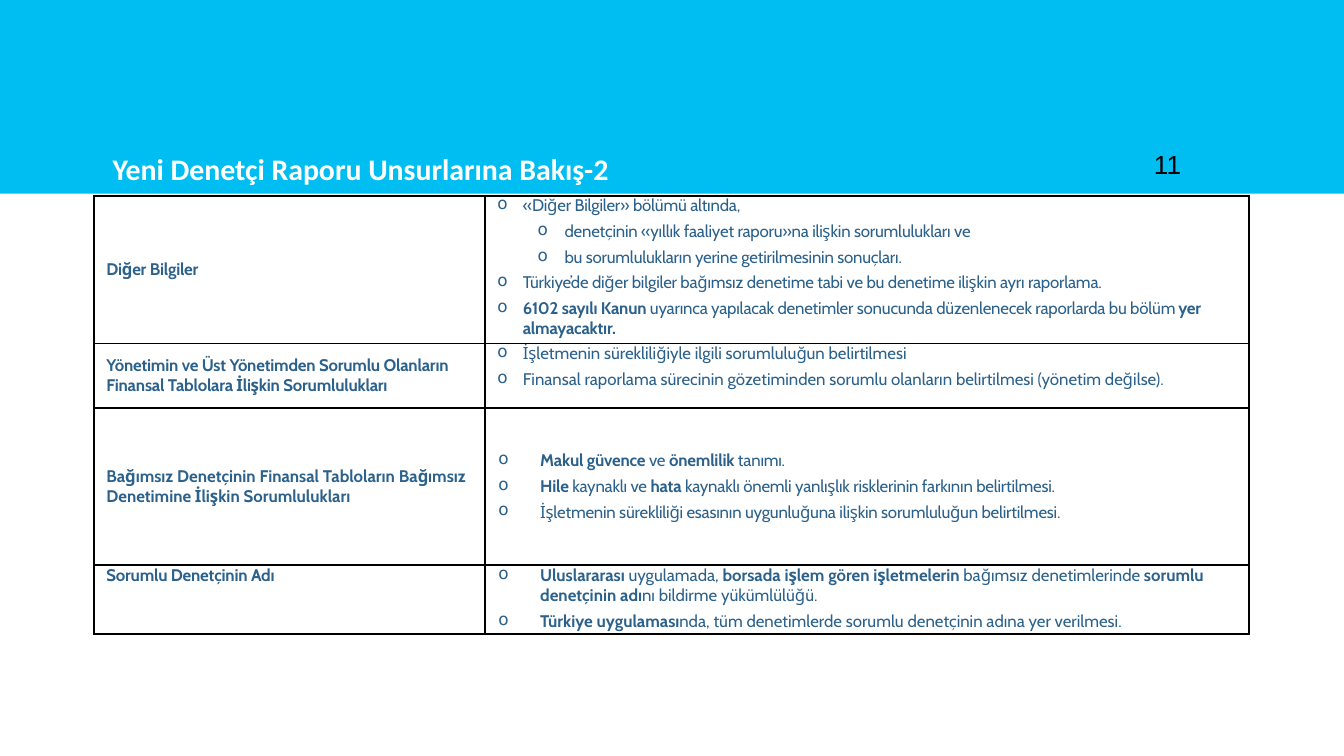
from dataclasses import dataclass

from pptx import Presentation
from pptx import util as u
from pptx.dml.color import RGBColor
from pptx.enum import shapes, text
from pptx.oxml import parse_xml
from pptx.oxml.ns import nsdecls, qn


@dataclass(frozen=True)
class Theme:
    band: RGBColor = RGBColor(0x00, 0xBE, 0xF2)
    white: RGBColor = RGBColor(0xFF, 0xFF, 0xFF)
    black: RGBColor = RGBColor(0x00, 0x00, 0x00)
    body: RGBColor = RGBColor(0x2B, 0x61, 0x8B)
    title_size: u.Pt = u.Pt(16)
    number_size: u.Pt = u.Pt(14)
    body_size: u.Pt = u.Pt(9)
    paragraph_gap: u.Pt = u.Pt(2.8)
    border: u.Pt = u.Pt(1)


THEME = Theme()

# Paragraph levels: left margin and first-line indent
LABEL = (u.Cm(0.23), u.Cm(0))
POINT = (u.Cm(0.71), u.Cm(-0.48))
SUBPOINT = (u.Cm(1.5), u.Cm(-0.51))
WIDE_POINT = (u.Cm(1.04), u.Cm(-0.79))

TOP, MIDDLE = text.MSO_ANCHOR.TOP, text.MSO_ANCHOR.MIDDLE
TIGHT, NORMAL = -10, 0  # letter spacing in hundredths of a point

COLUMN_WIDTHS = [u.Cm(7.39), u.Cm(14.43)]
ROW_HEIGHTS = [u.Cm(2.79), u.Cm(1.22), u.Cm(2.97), u.Cm(1.3)]

# Each cell: anchor, letter spacing, paragraphs; ** switches bold on and off
ROWS = [
    [
        (MIDDLE, TIGHT, [(LABEL, "**Diğer Bilgiler**")]),
        (TOP, TIGHT, [
            (POINT, "«Diğer Bilgiler» bölümü altında,"),
            (SUBPOINT, "denetçinin «yıllık faaliyet raporu»na ilişkin sorumlulukları ve"),
            (SUBPOINT, "bu sorumlulukların yerine getirilmesinin sonuçları."),
            (POINT, "Türkiye’de diğer bilgiler bağımsız denetime tabi ve bu denetime "
                    "ilişkin ayrı raporlama."),
            (POINT, "**6102 sayılı Kanun **uyarınca yapılacak denetimler sonucunda "
                    "düzenlenecek raporlarda bu bölüm **yer almayacaktır.**"),
        ]),
    ],
    [
        (MIDDLE, TIGHT, [(LABEL, "**Yönetimin ve Üst Yönetimden Sorumlu Olanların "
                                 "Finansal Tablolara İlişkin Sorumlulukları**")]),
        (TOP, NORMAL, [
            (POINT, "İşletmenin sürekliliğiyle ilgili sorumluluğun belirtilmesi"),
            (POINT, "Finansal raporlama sürecinin gözetiminden sorumlu olanların "
                    "belirtilmesi (yönetim değilse)."),
        ]),
    ],
    [
        (MIDDLE, NORMAL, [(LABEL, "**Bağımsız Denetçinin Finansal Tabloların Bağımsız "
                                  "Denetimine İlişkin Sorumlulukları**")]),
        (MIDDLE, TIGHT, [
            (WIDE_POINT, "**Makul güvence **ve **önemlilik** tanımı."),
            (WIDE_POINT, "**Hile** kaynaklı ve **hata** kaynaklı önemli yanlışlık "
                         "risklerinin farkının belirtilmesi."),
            (WIDE_POINT, "İşletmenin sürekliliği esasının uygunluğuna ilişkin "
                         "sorumluluğun belirtilmesi."),
        ]),
    ],
    [
        (TOP, TIGHT, [(LABEL, "**Sorumlu Denetçinin Adı**")]),
        (TOP, NORMAL, [
            (WIDE_POINT, "**Uluslararası** uygulamada, **borsada işlem gören "
                         "işletmelerin** bağımsız denetimlerinde **sorumlu "
                         "denetçinin adı**nı bildirme yükümlülüğü."),
            (WIDE_POINT, "**Türkiye uygulaması**nda, tüm denetimlerde sorumlu "
                         "denetçinin adına yer verilmesi."),
        ]),
    ],
]


def style_font(font, name, size, color):
    font.name = name
    font.size = size
    font.color.rgb = color


def add_band(slide, width, height):
    band = slide.shapes.add_shape(shapes.MSO_SHAPE.RECTANGLE, 0, 0, width, height)
    band.shadow.inherit = False
    band.fill.solid()
    band.fill.fore_color.rgb = THEME.band
    band.line.fill.background()


def add_label(slide, box, words, font_name, size, color, bold=False, anchor=TOP):
    frame = slide.shapes.add_textbox(*box).text_frame
    frame.word_wrap = True
    frame.vertical_anchor = anchor
    paragraph = frame.paragraphs[0]
    paragraph.text = words
    style_font(paragraph.font, font_name, size, color)
    paragraph.font.bold = bold
    return frame


def write_paragraph(paragraph, level, marked_text, spacing):
    margin, indent = level
    properties = paragraph._p.get_or_add_pPr()
    properties.set("marL", str(margin))
    properties.set("indent", str(indent))
    if level != LABEL:
        properties.append(parse_xml(f'<a:buChar {nsdecls("a")} char="o"/>'))
    style_font(paragraph.font, "Cabin", THEME.body_size, THEME.body)
    properties.find(qn("a:defRPr")).set("spc", str(spacing))
    for index, part in enumerate(marked_text.split("**")):
        if part:
            run = paragraph.add_run()
            run.text = part
            run.font.bold = index % 2 == 1


def draw_borders(cell):
    properties = cell._tc.get_or_add_tcPr()
    for side in ("lnL", "lnR", "lnT", "lnB"):
        properties.append(parse_xml(
            f'<a:{side} {nsdecls("a")} w="{THEME.border}"><a:solidFill>'
            f'<a:srgbClr val="{THEME.black}"/></a:solidFill></a:{side}>'))


def fill_cell(cell, anchor, spacing, paragraphs):
    draw_borders(cell)
    cell.fill.background()
    cell.margin_left = cell.margin_right = cell.margin_top = cell.margin_bottom = 0
    cell.vertical_anchor = anchor
    frame = cell.text_frame
    for index, (level, marked_text) in enumerate(paragraphs):
        paragraph = frame.add_paragraph() if index else frame.paragraphs[0]
        write_paragraph(paragraph, level, marked_text, spacing)
        if index:
            paragraph.space_before = THEME.paragraph_gap


def add_report_table(slide, left, top):
    table = slide.shapes.add_table(
        len(ROWS), len(COLUMN_WIDTHS), left, top,
        sum(COLUMN_WIDTHS), sum(ROW_HEIGHTS)).table
    table.first_row = table.horz_banding = False
    for column, width in zip(table.columns, COLUMN_WIDTHS):
        column.width = width
    for row, height, contents in zip(table.rows, ROW_HEIGHTS, ROWS):
        row.height = height
        for cell, content in zip(row.cells, contents):
            fill_cell(cell, *content)


def main():
    presentation = Presentation()
    presentation.slide_width = u.Cm(25.4)
    presentation.slide_height = u.Cm(14.29)
    slide = presentation.slides.add_slide(presentation.slide_layouts[6])

    # Header band with slide number and title
    add_band(slide, presentation.slide_width, u.Cm(3.66))
    number = add_label(slide, (u.Cm(21.56), u.Cm(1.8), u.Cm(1.52), u.Cm(1.85)), "11",
                       "Arial", THEME.number_size, THEME.black,
                       anchor=text.MSO_ANCHOR.BOTTOM)
    number.margin_top = number.margin_bottom = u.Cm(0.25)
    add_label(slide, (u.Cm(1.88), u.Cm(2.72), u.Cm(10.8), u.Cm(0.94)),
              "Yeni Denetçi Raporu Unsurlarına Bakış-2",
              "Calibri", THEME.title_size, THEME.white, bold=True)

    # Report elements
    add_report_table(slide, u.Cm(1.78), u.Cm(3.7))

    presentation.save("out.pptx")


if __name__ == "__main__":
    main()
